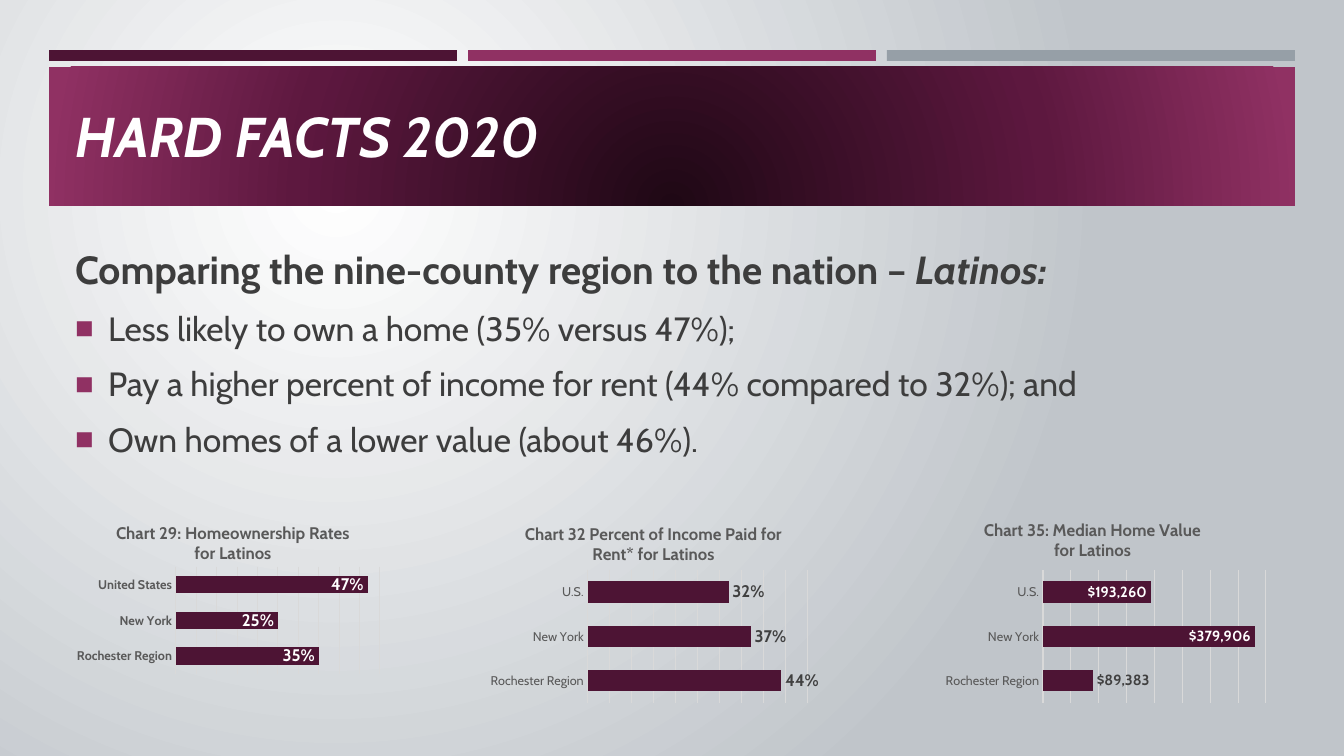
from lxml import etree
from pptx import Presentation
from pptx.chart.data import CategoryChartData
from pptx.dml.color import RGBColor
from pptx.enum.chart import XL_CHART_TYPE, XL_LABEL_POSITION, XL_TICK_MARK
from pptx.enum.shapes import MSO_SHAPE
from pptx.enum.text import MSO_ANCHOR, MSO_AUTO_SIZE, PP_ALIGN
from pptx.oxml.ns import qn
from pptx.util import Pt

BAR = XL_CHART_TYPE.BAR_CLUSTERED
IN_END = XL_LABEL_POSITION.INSIDE_END
OUT_END = XL_LABEL_POSITION.OUTSIDE_END
NO_TICK = XL_TICK_MARK.NONE
RECT = MSO_SHAPE.RECTANGLE
MIDDLE = MSO_ANCHOR.MIDDLE
FIXED = MSO_AUTO_SIZE.NONE
LEFT = PP_ALIGN.LEFT

THEME = {
    "font": "Cabin",
    "plum": "4D1434", "rose": "903163", "slate": "969FA7", "white": "FFFFFF",
    "body": "3D3D3D", "label": "404040", "axis": "595959", "grid": "D9D9D9",
    "sky": [(0, "FFFFFF"), (100, "C0C5CA")],
    "wine": [(0, "1F0815"), (60, "5D183F"), (100, "903163")],
    "title_pt": 40, "head_pt": 28, "list_pt": 24,
    "chart_pt": 12, "axis_pt": 9,
}
PX = 914400 / 100.8


def style(font, size, color, bold=False, italic=False):
    font.name = THEME["font"]
    font.size = Pt(size)
    font.bold = bold
    font.italic = italic
    font.color.rgb = RGBColor.from_string(THEME[color])


def radial(fill, root, stops, focus):
    """Fill with a circular gradient; focus is the inner rectangle in percent."""
    fill.gradient()
    grad = root.find(".//" + qn("a:gradFill"))
    for child in list(grad):
        grad.remove(child)
    row = etree.SubElement(grad, qn("a:gsLst"))
    for pos, color in stops:
        stop = etree.SubElement(row, qn("a:gs"), pos=str(pos * 1000))
        etree.SubElement(stop, qn("a:srgbClr"), val=color)
    ring = etree.SubElement(grad, qn("a:path"), {"path": "circle"})
    sides = {side: str(part * 1000) for side, part in zip("ltrb", focus)}
    etree.SubElement(ring, qn("a:fillToRect"), sides)


deck = Presentation()
deck.slide_width, deck.slide_height = round(1344 * PX), round(756 * PX)
slide = deck.slides.add_slide(deck.slide_layouts[1])
radial(slide.background.fill, slide.element, THEME["sky"], (50, 50, 100, 100))

# Bars and banner
for i, color in enumerate(("plum", "rose", "slate")):
    box = [round(n * PX) for n in (49 + 419 * i, 50, 408, 11)]
    strip = slide.shapes.add_shape(RECT, *box)
    strip.shadow.inherit = False
    strip.fill.solid()
    strip.fill.fore_color.rgb = RGBColor.from_string(THEME[color])
    strip.line.fill.background()

banner = slide.shapes.add_shape(RECT, *[round(n * PX) for n in (49, 67, 1246, 139)])
banner.shadow.inherit = False
banner.line.fill.background()
radial(banner.fill, banner.element, THEME["wine"], (50, 130, 50, -30))

# Title and list
title, body = slide.shapes.title, slide.placeholders[1]
for holder, top, height in ((body, 240, 467), (title, 81, 109)):
    holder.left, holder.width = round(65 * PX), round(1216 * PX)
    holder.top, holder.height = round(top * PX), round(height * PX)
    holder.text_frame.auto_size = FIXED
    banner.element.addnext(holder.element)

title.text_frame.text = "HARD FACTS 2020"
title.text_frame.vertical_anchor = MIDDLE
head = title.text_frame.paragraphs[0]
head.alignment = LEFT
style(head.font, THEME["title_pt"], "white", True, True)

lines = (
    "Comparing the nine-county region to the nation – ",
    "Less likely to own a home (35% versus 47%);",
    "Pay a higher percent of income for rent (44% compared to 32%); and",
    "Own homes of a lower value (about 46%).",
)
body.text_frame.text = "\n".join(lines)
for i, para in enumerate(body.text_frame.paragraphs):
    props = para._p.get_or_add_pPr()
    inset = round(33 * PX) if i else 0
    props.set("marL", str(inset))
    props.set("indent", str(-inset))
    para.space_before = Pt(5 if i else 0)
    para.space_after = Pt(6)
    if i:
        tint = etree.SubElement(props, qn("a:buClr"))
        etree.SubElement(tint, qn("a:srgbClr"), val=THEME["rose"])
        etree.SubElement(props, qn("a:buSzPct"), val="92000")
        etree.SubElement(props, qn("a:buChar"), char="■")
    else:
        etree.SubElement(props, qn("a:buNone"))
    style(para.font, THEME["list_pt" if i else "head_pt"], "body", not i)
group = body.text_frame.paragraphs[0].add_run()
group.text = "Latinos:"
group.font.italic = True

# Charts: box, title corner and plot are slide px; marks are (place, color) per bar
INSIDE, OUTSIDE = (IN_END, "white"), (OUT_END, "label")
charts = (
    dict(box=(65, 506, 332, 183), corner=(113, 519), plot=(176, 567, 204, 107),
         title="Chart 29: Homeownership Rates\nfor Latinos",
         nation="United States", vals=(0.35, 0.25, 0.47), form="0%",
         top=0.5, step=0.05, size=12, bold=True, marks=(INSIDE,) * 3),
    dict(box=(485, 506, 334, 201), corner=(522, 520), plot=(588, 570, 221, 133),
         title="Chart 32 Percent of Income Paid for\nRent* for Latinos",
         nation="U.S.", vals=(0.44, 0.37, 0.32), form="0%",
         top=0.5, step=0.05, size=12, bold=False, marks=(OUTSIDE,) * 3),
    dict(box=(938, 506, 334, 201), corner=(981, 516), plot=(1043, 570, 223, 133),
         title="Chart 35: Median Home Value\nfor Latinos",
         nation="U.S.", vals=(89383, 379906, 193260), form='"$"#,##0',
         top=400000, step=50000, size=10.5, bold=False,
         marks=(OUTSIDE, INSIDE, INSIDE)),
)
for item in charts:
    data = CategoryChartData(number_format=item["form"])
    data.categories = ["Rochester Region", "New York", item["nation"]]
    data.add_series("Series 1", item["vals"])
    box = item["box"]
    frame = slide.shapes.add_chart(BAR, *[round(n * PX) for n in box], data)
    chart = frame.chart
    chart.has_legend = False
    style(chart.font, THEME["axis_pt"], "axis")

    chart.has_title = True
    name = chart.chart_title
    name.text_frame.text = item["title"]
    for para in name.text_frame.paragraphs:
        style(para.font, THEME["chart_pt"], "axis", True)

    area = chart.element.find(".//" + qn("c:plotArea"))
    for parent, index, rect in ((name._element, 1, item["corner"]),
                                (area, 0, item["plot"])):
        for old in parent.findall(qn("c:layout")):
            parent.remove(old)
        layout = etree.Element(qn("c:layout"))
        manual = etree.SubElement(layout, qn("c:manualLayout"))
        if parent is area:
            etree.SubElement(manual, qn("c:layoutTarget"), val="inner")
        for key in ("xMode", "yMode"):
            etree.SubElement(manual, qn("c:" + key), val="edge")
        start = (box[0], box[1], 0, 0)
        for key, n, zero, full in zip("xywh", rect, start, box[2:] * 2):
            etree.SubElement(manual, qn("c:" + key), val=f"{(n - zero) / full:.4f}")
        parent.insert(index, layout)

    cats, scale = chart.category_axis, chart.value_axis
    cats.major_tick_mark = cats.minor_tick_mark = NO_TICK
    style(cats.tick_labels.font, THEME["axis_pt"], "axis", item["bold"])
    scale.visible = False
    scale.minimum_scale, scale.maximum_scale = 0, item["top"]
    scale.major_unit = item["step"]
    scale.has_major_gridlines = True
    for rule in (cats.format.line, scale.major_gridlines.format.line):
        rule.color.rgb = RGBColor.from_string(THEME["grid"])
        rule.width = Pt(0.75)

    plot = chart.plots[0]
    plot.vary_by_categories = False
    plot.gap_width, plot.overlap = 106, 78
    bars = plot.series[0]
    bars.format.fill.solid()
    bars.format.fill.fore_color.rgb = RGBColor.from_string(THEME["plum"])
    bars.data_labels.show_value = True
    bars.data_labels.number_format = item["form"]
    bars.data_labels.number_format_is_linked = False
    for i, (place, color) in enumerate(item["marks"]):
        label = bars.points[i].data_label
        style(label.font, item["size"], color, True)
        label.position = place

deck.save("out.pptx")
